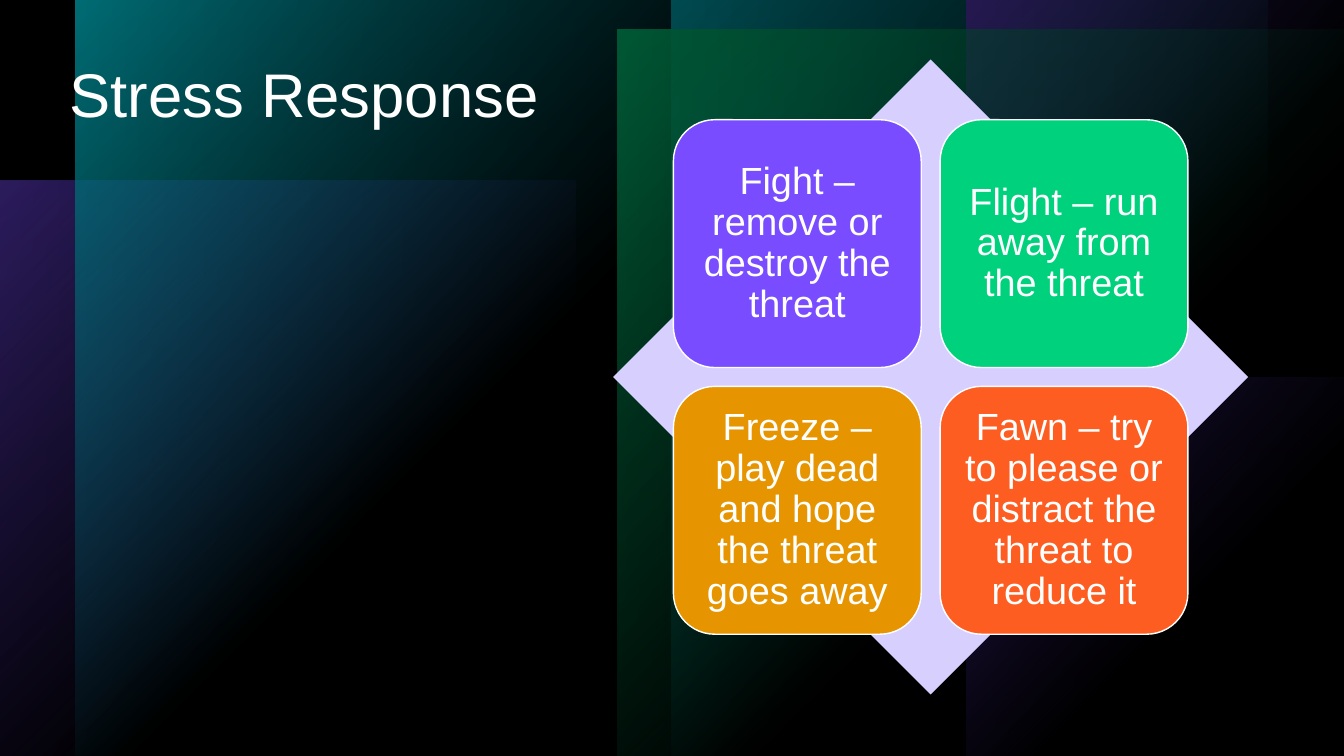
"""Build the Stress Response slide: four reactions on a diamond."""
from lxml import etree
from pptx import Presentation
from pptx.dml.color import RGBColor
from pptx.enum.shapes import MSO_SHAPE
from pptx.enum.text import MSO_ANCHOR, PP_ALIGN
from pptx.oxml import parse_xml
from pptx.util import Pt

RECT = MSO_SHAPE.RECTANGLE
DIAMOND = MSO_SHAPE.DIAMOND
ROUNDED = MSO_SHAPE.ROUNDED_RECTANGLE
TOP, MIDDLE = MSO_ANCHOR.TOP, MSO_ANCHOR.MIDDLE
LEFT, CENTER = PP_ALIGN.LEFT, PP_ALIGN.CENTER

BLACK = RGBColor(0x00, 0x00, 0x00)
WHITE = RGBColor(0xFF, 0xFF, 0xFF)
PURPLE = RGBColor(0x79, 0x4D, 0xFF)
GREEN = RGBColor(0x00, 0xD1, 0x7D)
TEAL = RGBColor(0x00, 0xBA, 0xC8)
AMBER = RGBColor(0xE6, 0x95, 0x00)
ORANGE = RGBColor(0xFE, 0x5D, 0x21)
LAVENDER = RGBColor(0xD7, 0xD0, 0xFF)

FONT = "Arial"
NS = "http://schemas.openxmlformats.org/drawingml/2006/main"
CORNER_GLOW = ('<a:path path="circle">'
               '<a:fillToRect l="0" t="0" r="100000" b="100000"/></a:path>')
LEFT_TO_RIGHT = '<a:lin ang="0" scaled="0"/>'

SLIDE_W, SLIDE_H = 960, 540
MARGIN = 42.5
DIAMOND_LEFT, DIAMOND_SIZE = 438, 453.6
CARD_SIZE, CARD_GAP = 177, 13.5

GLOWS = [
    (0, 129, 411, 411, PURPLE, 60),
    (479.5, 0, 425.5, 540, TEAL, 100),
    (54, 0, 425.5, 540, TEAL, 100),
    (690, 270, 270, 270, PURPLE, 100),
    (690, 0, 270, 270, PURPLE, 100),
    (441, 21, 519, 519, GREEN, 100),
]
RESPONSES = [
    ("Fight – remove or destroy the threat", PURPLE),
    ("Flight – run away from the threat", GREEN),
    ("Freeze – play dead and hope the threat goes away", AMBER),
    ("Fawn – try to please or distract the threat to reduce it", ORANGE),
]


def add_block(slide, kind, left, top, width, height, fill=None, line=None):
    """Add a flat shape with an optional solid fill and outline."""
    block = slide.shapes.add_shape(kind, Pt(left), Pt(top), Pt(width), Pt(height))
    block.shadow.inherit = False
    if fill is None:
        block.fill.background()
    else:
        block.fill.solid()
        block.fill.fore_color.rgb = fill
    if line is None:
        block.line.fill.background()
    else:
        block.line.color.rgb = line
        block.line.width = Pt(1)
    return block


def add_gradient(slide, left, top, width, height, color, stops, direction):
    """Add a rectangle that fades through (position, opacity) stops."""
    area = add_block(slide, RECT, left, top, width, height)
    gradient = parse_xml(f'<a:gradFill xmlns:a="{NS}" rotWithShape="1"><a:gsLst/>'
                         f'{direction}</a:gradFill>')
    for position, opacity in stops:
        stop = etree.SubElement(gradient[0], f"{{{NS}}}gs", pos=str(position * 1000))
        tint = etree.SubElement(stop, f"{{{NS}}}srgbClr", val=str(color))
        etree.SubElement(tint, f"{{{NS}}}alpha", val=str(opacity * 1000))
    properties = area.element.spPr
    properties.replace(properties.find(f"{{{NS}}}noFill"), gradient)
    return area


def write_text(frame, text, *, size, align, anchor, inset=None):
    """Fill a text frame with one formatted paragraph."""
    frame.text = text
    frame.word_wrap = True
    frame.vertical_anchor = anchor
    if inset is not None:
        frame.margin_left = frame.margin_right = Pt(inset)
        frame.margin_top = frame.margin_bottom = Pt(inset)
    paragraph = frame.paragraphs[0]
    paragraph.alignment = align
    paragraph.line_spacing = 0.9
    font = paragraph.runs[0].font
    font.name, font.size, font.color.rgb = FONT, Pt(size), WHITE


def add_backdrop(slide):
    """Paint the black background, corner glows and dark veil."""
    slide.background.fill.solid()
    slide.background.fill.fore_color.rgb = BLACK
    for left, top, width, height, color, opacity in GLOWS:
        add_gradient(slide, left, top, width, height, color,
                     [(0, opacity), (60, 0), (100, 0)], CORNER_GLOW)
    return add_gradient(slide, 0, 0, SLIDE_W, SLIDE_H, BLACK,
                        [(0, 40), (100, 80)], LEFT_TO_RIGHT)


def add_title(slide, text, veil):
    """Place the title above the veil."""
    title = slide.shapes.title
    veil.element.addnext(title.element)
    title.left, title.top = Pt(MARGIN), Pt(MARGIN)
    title.width, title.height = Pt(354), Pt(DIAMOND_SIZE)
    write_text(title.text_frame, text, size=44, align=LEFT, anchor=TOP)


def add_matrix(slide):
    """Draw the diamond and centre a two-by-two grid of cards on it."""
    add_block(slide, DIAMOND, DIAMOND_LEFT, MARGIN, DIAMOND_SIZE, DIAMOND_SIZE, LAVENDER)
    offset = (DIAMOND_SIZE - 2 * CARD_SIZE - CARD_GAP) / 2
    pitch = CARD_SIZE + CARD_GAP
    for index, (response, color) in enumerate(RESPONSES):
        row, column = divmod(index, 2)
        card = add_block(slide, ROUNDED, DIAMOND_LEFT + offset + column * pitch,
                         MARGIN + offset + row * pitch, CARD_SIZE, CARD_SIZE, color, WHITE)
        write_text(card.text_frame, response, size=27, align=CENTER,
                   anchor=MIDDLE, inset=8)


def main():
    """Build and save the slide."""
    deck = Presentation()
    deck.slide_width, deck.slide_height = Pt(SLIDE_W), Pt(SLIDE_H)
    slide = deck.slides.add_slide(deck.slide_layouts[5])
    veil = add_backdrop(slide)
    add_title(slide, "Stress Response", veil)
    add_matrix(slide)
    deck.save("out.pptx")


if __name__ == "__main__":
    main()
